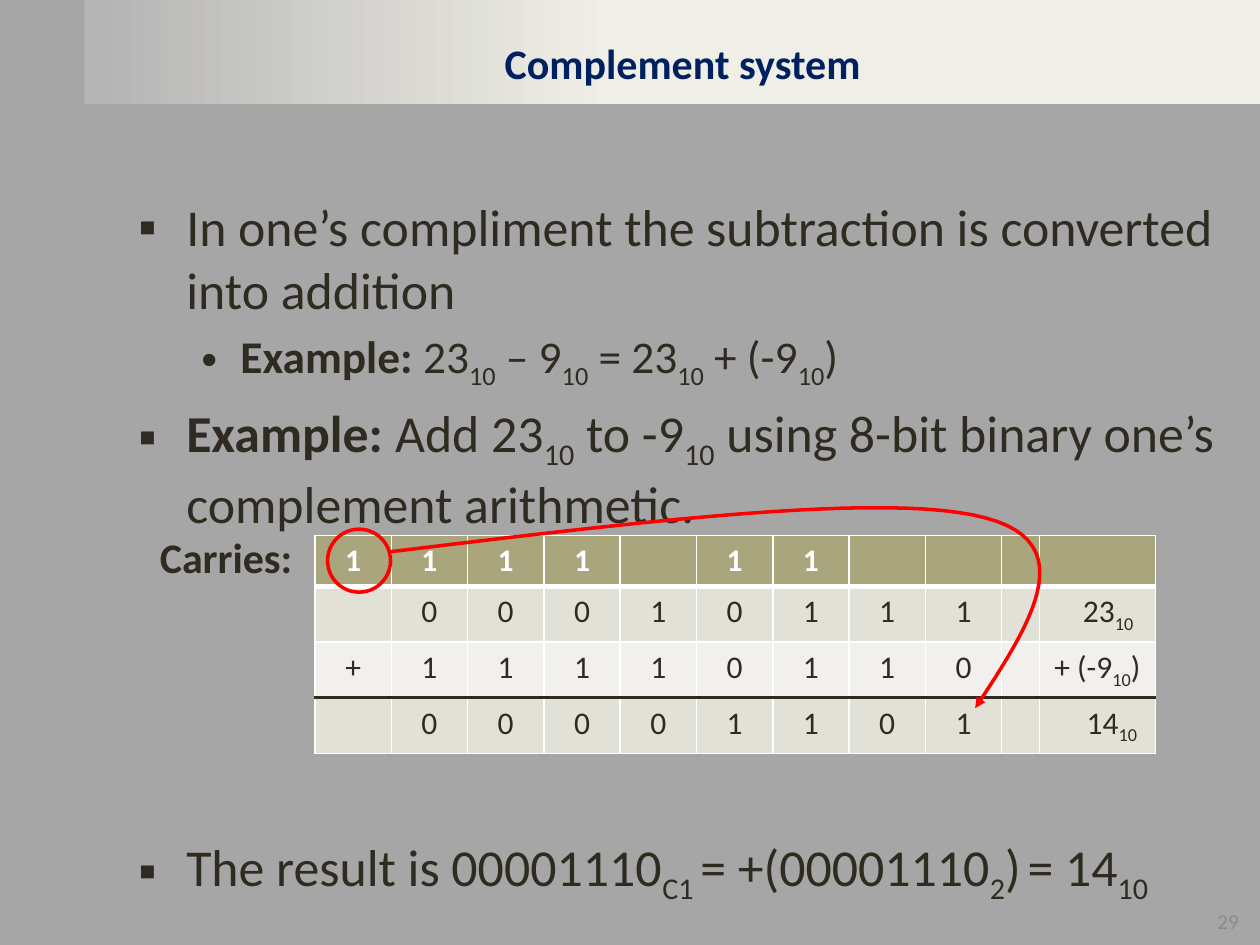
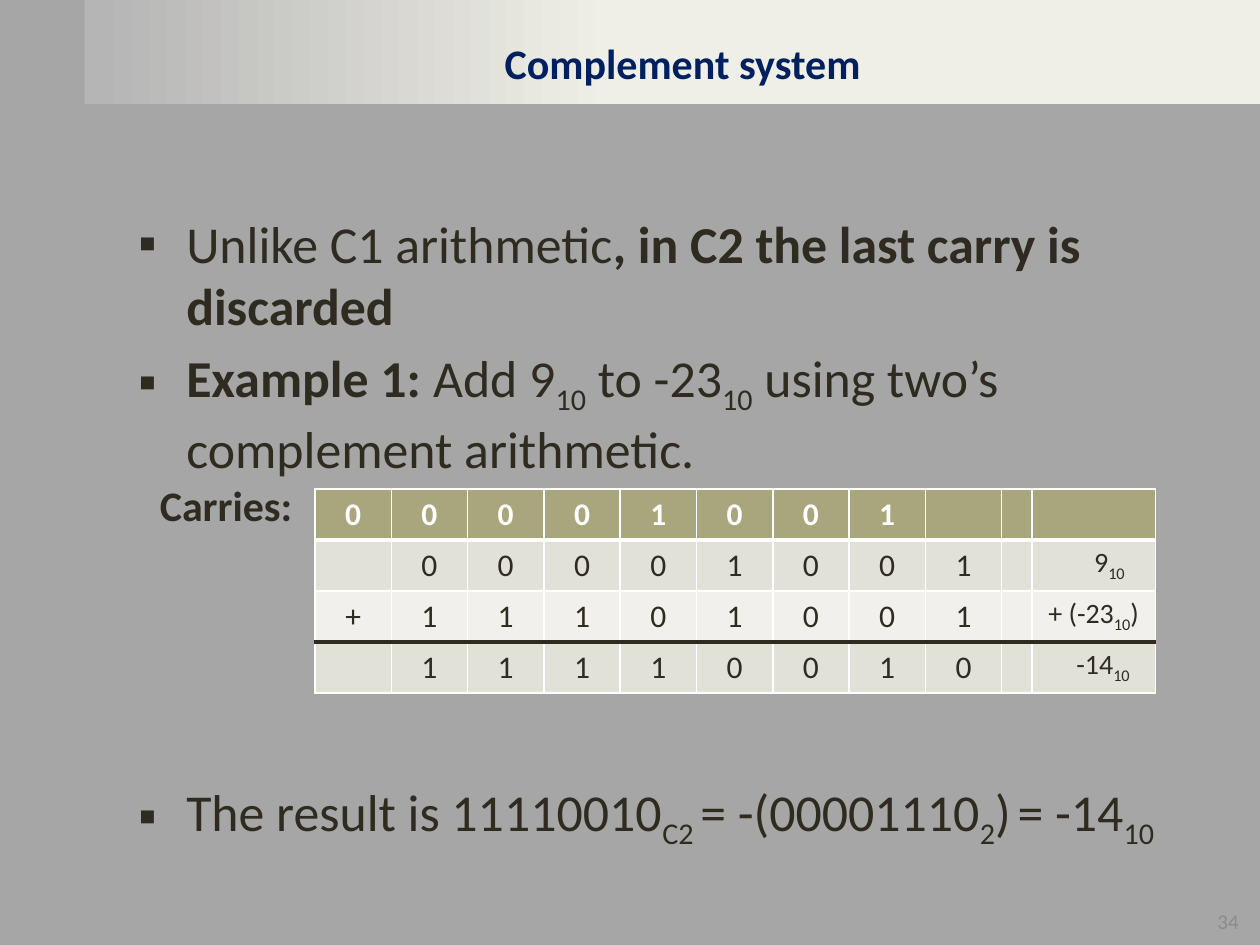
"""Build two slides on binary subtraction with one's and two's complement."""
import pptx
import pptx.dml.color
import pptx.enum.shapes
import pptx.enum.text
import pptx.oxml.ns
import pptx.util
from lxml import etree
from pptx.util import Inches

FONT = "Calibri"
BACKGROUND = "A6A6A6"
BAND_START, BAND_END = "B5B5B5", "F0EFE7"
TITLE_COLOUR = "002060"
TEXT_COLOUR = "2F2B20"
NUMBER_COLOUR = "8B8B8B"
WHITE = "FFFFFF"
RED = "FF0000"
ROW_FILLS = ["A9A57C", "E2E1D7", "F1F0EC", "E2E1D7"]
ROW_RULES = [(WHITE, 1), (WHITE, 3), (WHITE, 1), (TEXT_COLOUR, 2.25), (WHITE, 1)]
CENTER = pptx.enum.text.PP_ALIGN.CENTER
RIGHT = pptx.enum.text.PP_ALIGN.RIGHT
DIGIT_COLUMNS = 9
qn = pptx.oxml.ns.qn


def colour(hex_string):
    """Return the colour for a hex string."""
    return pptx.dml.color.RGBColor.from_string(hex_string)


def write(paragraph, text, size, text_colour=TEXT_COLOUR, bold=False, alignment=None):
    """Fill a paragraph, where *...* is bold and ~...~ is subscript."""
    paragraph.alignment = alignment
    paragraph.font.name = FONT
    paragraph.font.size = pptx.util.Pt(size)
    paragraph.font.bold = bold
    paragraph.font.color.rgb = colour(text_colour)
    for bold_index, section in enumerate(text.split("*")):
        for subscript_index, part in enumerate(section.split("~")):
            if part:
                run = paragraph.add_run()
                run.text = part
                if bold_index % 2:
                    run.font.bold = True
                if subscript_index % 2:
                    run._r.get_or_add_rPr().set("baseline", "-25000")


slides = [
    {
        "number": "29",
        "body": (1.5, 5.25),
        "bullets": [
            (0, "In one’s compliment the subtraction is converted into addition", 0),
            (1, "*Example: *23~10~ – 9~10~ = 23~10~ + (-9~10~)", 5.2),
            (0, "*Example: *Add 23~10~ to -9~10~ using 8-bit binary one’s complement arithmetic.", 5.9),
            (0, "The result is 00001110~C1 ~= +(00001110~2~)~ ~= 14~10~", 172),
        ],
        "table_top": 4.25,
        "carries_top": 4.17,
        "gap_width": 0.3,
        "digits": ["1111 11  ", " 00010111", "+11110110", " 00001101"],
        "values": [("", 18, 0), ("23~10~", 18, 0.17), ("+ (-9~10~)", 18, 0), ("14~10~", 18, 0.23)],
    },
    {
        "number": "34",
        "body": (1.63, 4.95),
        "bullets": [
            (0, "Unlike C1 arithmetic*, in C2 the last carry is discarded*", 0),
            (0, "*Example 1: *Add 9~10~ to -23~10~ using two’s complement arithmetic.", 5.9),
            (0, "The result is 11110010~C2 ~= -(00001110~2~)~ ~= -14~10~", 172),
        ],
        "table_top": 3.88,
        "carries_top": 3.76,
        "gap_width": 0.24,
        "digits": ["00001001 ", " 00001001", "+11101001", " 11110010"],
        "values": [("", 18, 0), ("9~10~", 16, 0.25), ("+ (-23~10~)", 16, 0), ("-14~10~", 16, 0.15)],
    },
]
bullet_levels = [("▪", 29.6, 0.38, -0.38), ("•", 25.9, 0.81, -0.31)]

presentation = pptx.Presentation()
presentation.slide_width = Inches(10)
presentation.slide_height = Inches(7.5)

for content in slides:
    slide = presentation.slides.add_slide(presentation.slide_layouts[6])
    slide.background.fill.solid()
    slide.background.fill.fore_color.rgb = colour(BACKGROUND)

    band = slide.shapes.add_shape(
        pptx.enum.shapes.MSO_SHAPE.RECTANGLE, Inches(0.67), 0, Inches(9.33), Inches(0.83))
    band.shadow.inherit = False
    band.line.fill.background()
    band.fill.gradient()
    band.fill.gradient_angle = 0
    for stop, position, stop_colour in zip(
            band.fill.gradient_stops, (0.01, 0.45), (BAND_START, BAND_END)):
        stop.position = position
        stop.color.rgb = colour(stop_colour)

    title = slide.shapes.add_textbox(Inches(0.91), Inches(0.25), Inches(9.09), Inches(0.5))
    title.text_frame.word_wrap = True
    title.text_frame.vertical_anchor = pptx.enum.text.MSO_ANCHOR.MIDDLE
    write(title.text_frame.paragraphs[0], "Complement system ", 24, TITLE_COLOUR, True, CENTER)

    body_top, body_height = content["body"]
    body = slide.shapes.add_textbox(
        Inches(1), Inches(body_top), Inches(8.92), Inches(body_height))
    body.text_frame.word_wrap = True
    for index, (level, text, space_before) in enumerate(content["bullets"]):
        paragraph = body.text_frame.add_paragraph() if index else body.text_frame.paragraphs[0]
        symbol, size, margin, indent = bullet_levels[level]
        paragraph.level = level
        paragraph.space_before = pptx.util.Pt(space_before)
        write(paragraph, text, size)
        properties = paragraph._p.get_or_add_pPr()
        properties.set("marL", str(Inches(margin)))
        properties.set("indent", str(Inches(indent)))
        bullet_font = etree.Element(qn("a:buFont"), typeface="Arial")
        bullet = etree.Element(qn("a:buChar"), char=symbol)
        default_font = properties.find(qn("a:defRPr"))
        default_font.addprevious(bullet_font)
        default_font.addprevious(bullet)

    table_shape = slide.shapes.add_table(
        4, DIGIT_COLUMNS + 2, Inches(2.5), Inches(content["table_top"]), Inches(6.67), Inches(1.62))
    table = table_shape.table
    gap_width = content["gap_width"]
    widths = [5.45 / DIGIT_COLUMNS] * DIGIT_COLUMNS + [gap_width, 1.22 - gap_width]
    for column, width in zip(table.columns, widths):
        column.width = Inches(width)
    for row_index, (digits, value) in enumerate(zip(content["digits"], content["values"])):
        table.rows[row_index].height = Inches(1.62 / 4)
        value_text, value_size, value_indent = value
        texts = [digit.strip() for digit in digits] + ["", value_text]
        for column_index, text in enumerate(texts):
            cell = table.cell(row_index, column_index)
            is_value = column_index == DIGIT_COLUMNS + 1
            if is_value:
                cell.margin_left = Inches(0.1 + value_indent)
            write(cell.text_frame.paragraphs[0], text, value_size if is_value else 18,
                  TEXT_COLOUR if row_index else WHITE, row_index == 0, CENTER)
            rules = {"L": (WHITE, 1), "R": (WHITE, 1),
                     "T": ROW_RULES[row_index], "B": ROW_RULES[row_index + 1]}
            cell_properties = cell._tc.get_or_add_tcPr()
            for side, (rule_colour, rule_width) in rules.items():
                rule = etree.SubElement(
                    cell_properties, qn("a:ln" + side), w=str(pptx.util.Pt(rule_width)))
                rule_fill = etree.SubElement(rule, qn("a:solidFill"))
                etree.SubElement(rule_fill, qn("a:srgbClr"), val=rule_colour)
            cell.fill.solid()
            cell.fill.fore_color.rgb = colour(ROW_FILLS[row_index])

    carries = slide.shapes.add_textbox(
        Inches(1.17), Inches(content["carries_top"]), Inches(1.74), Inches(0.5))
    carries.text_frame.word_wrap = True
    write(carries.text_frame.paragraphs[0], "Carries:", 24, bold=True)

    number = slide.shapes.add_textbox(Inches(7.5), Inches(7.16), Inches(2.43), Inches(0.3))
    number.text_frame.word_wrap = True
    write(number.text_frame.paragraphs[0], content["number"], 12, NUMBER_COLOUR, alignment=RIGHT)

first_slide = presentation.slides[0]
carry_circle = first_slide.shapes.add_shape(
    pptx.enum.shapes.MSO_SHAPE.OVAL, Inches(2.6), Inches(4.2), Inches(0.5), Inches(0.5))

curves = [
    [(3.09, 4.38), (5.07, 4.14), (7.05, 3.9), (7.82, 4.11)],
    [(7.82, 4.11), (8.6, 4.31), (8.17, 4.97), (7.74, 5.62)],
]
steps = 24
points = [[Inches(value) for value in curves[0][0]]]
for curve in curves:
    for step in range(1, steps + 1):
        t = step / steps
        weights = [(1 - t) ** 3, 3 * t * (1 - t) ** 2, 3 * t ** 2 * (1 - t), t ** 3]
        points.append([Inches(sum(weight * point[axis] for weight, point in zip(weights, curve)))
                       for axis in (0, 1)])
builder = first_slide.shapes.build_freeform(*points[0])
builder.add_line_segments(points[1:], close=False)
carry_arrow = builder.convert_to_shape()

for shape in (carry_circle, carry_arrow):
    shape.shadow.inherit = False
    shape.fill.background()
    shape.line.color.rgb = colour(RED)
    shape.line.width = pptx.util.Pt(2)
arrow_line = carry_arrow.element.spPr.find(qn("a:ln"))
etree.SubElement(arrow_line, qn("a:tailEnd"), type="triangle")

presentation.save("out.pptx")
